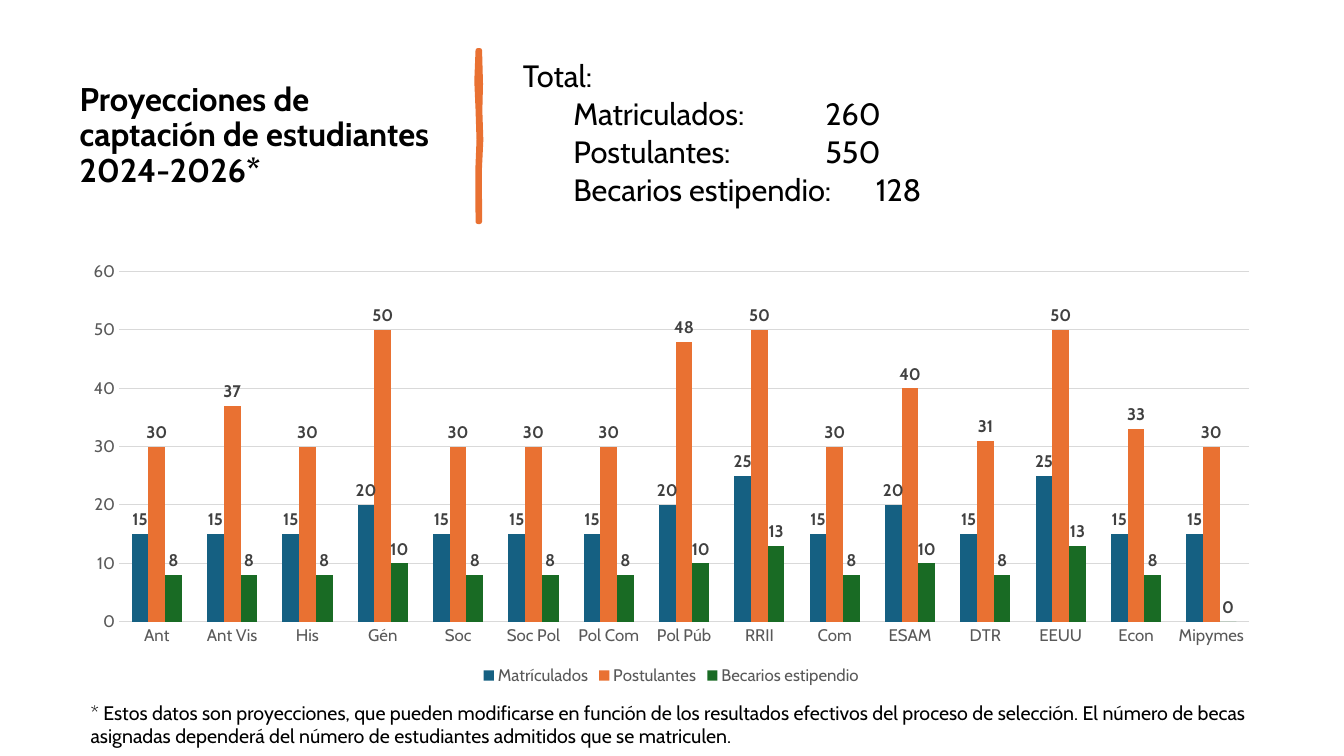
from lxml.etree import SubElement
from pptx import Presentation
from pptx.chart.data import CategoryChartData
from pptx.dml.color import RGBColor
from pptx.enum.chart import (XL_CHART_TYPE as ChartType, XL_LABEL_POSITION as LabelPosition,
                             XL_LEGEND_POSITION as LegendPosition, XL_TICK_MARK as TickMark)
from pptx.enum.text import MSO_ANCHOR as Anchor, MSO_AUTO_SIZE as AutoSize, PP_ALIGN as Align
from pptx.oxml.ns import qn
from pptx.util import Pt

FONT = "Cabin"
BLACK = RGBColor(0x00, 0x00, 0x00)
DARK_GRAY = RGBColor(0x40, 0x40, 0x40)
GRAY = RGBColor(0x59, 0x59, 0x59)
LIGHT_GRAY = RGBColor(0xD9, 0xD9, 0xD9)
BLUE = RGBColor(0x15, 0x60, 0x82)
ORANGE = RGBColor(0xE9, 0x71, 0x32)
GREEN = RGBColor(0x19, 0x6B, 0x24)


def format_font(font, size, color, bold=False):
    font.name, font.size, font.bold = FONT, Pt(size), bold
    font.color.rgb = color


def write_text(box, lines, size, bold=False, anchor=Anchor.TOP, line_spacing=1.0, space_after=0):
    frame = box.text_frame
    frame.word_wrap = True
    frame.auto_size = AutoSize.NONE
    frame.vertical_anchor = anchor
    for index, line in enumerate(lines):
        para = frame.paragraphs[0] if index == 0 else frame.add_paragraph()
        para.alignment = Align.LEFT
        para.line_spacing = line_spacing
        para.space_before, para.space_after = Pt(0), Pt(space_after)
        span = para.add_run()
        span.text = line
        format_font(span.font, size, BLACK, bold)


deck = Presentation()
deck.slide_width, deck.slide_height = Pt(960), Pt(540)
page = deck.slides.add_slide(deck.slide_layouts[5])
shapes = page.shapes

# Title
title = shapes.title
title.left, title.top, title.width, title.height = Pt(49.7), Pt(39.6), Pt(269.3), Pt(115.2)
write_text(title, ["Proyecciones de captación de estudiantes 2024-2026*"], 23.4,
           bold=True, anchor=Anchor.MIDDLE, line_spacing=0.9)

# Hand-drawn divider: down the right edge, up the left edge
divider_outline = [
    (342.7, 36), (343.4, 60), (342.9, 79), (343.6, 100), (342.6, 121), (342.7, 158.4),
    (341.3, 158.4), (341.2, 120), (342, 100), (341.3, 78), (340.4, 58), (341.3, 36),
]
corners = [(Pt(x), Pt(y)) for x, y in divider_outline]
builder = shapes.build_freeform(*corners[0], scale=1.0)
builder.add_line_segments(corners[1:], close=True)
divider = builder.convert_to_shape()
divider.shadow.inherit = False
divider.fill.solid()
divider.fill.fore_color.rgb = ORANGE
divider.line.color.rgb = ORANGE
divider.line.width = Pt(3.25)
SubElement(divider.line._get_or_add_ln(), qn("a:round"))

# Totals
totals = shapes.add_textbox(Pt(366.5), Pt(39.6), Pt(542.9), Pt(115.2))
write_text(totals, [
    "Total:",
    "\tMatriculados: \t\t260",
    "\tPostulantes: \t\t550",
    "\tBecarios estipendio: \t128",
], 22, anchor=Anchor.MIDDLE, line_spacing=0.8, space_after=6)

# Chart
data = CategoryChartData()
data.categories = ["Ant", "Ant Vis", "His", "Gén", "Soc", "Soc Pol", "Pol Com", "Pol Púb",
                   "RRII", "Com", "ESAM", "DTR", "EEUU", "Econ", "Mipymes"]
groups = [
    ("Matrículados", BLUE, [15, 15, 15, 20, 15, 15, 15, 20, 25, 15, 20, 15, 25, 15, 15]),
    ("Postulantes", ORANGE, [30, 37, 30, 50, 30, 30, 30, 48, 50, 30, 40, 31, 50, 33, 30]),
    ("Becarios estipendio", GREEN, [8, 8, 8, 10, 8, 8, 8, 10, 13, 8, 10, 8, 13, 8, 0]),
]
for name, _, values in groups:
    data.add_series(name, values)

chart = shapes.add_chart(ChartType.COLUMN_CLUSTERED, Pt(49.7), Pt(180.7), Pt(859.7), Pt(311.8),
                         data).chart
format_font(chart.font, 10, BLACK)
chart.has_title = False
chart.has_legend = True
chart.legend.position = LegendPosition.BOTTOM
chart.legend.include_in_layout = False
format_font(chart.legend.font, 12, GRAY)

for axis in (chart.category_axis, chart.value_axis):
    axis.major_tick_mark = axis.minor_tick_mark = TickMark.NONE
    format_font(axis.tick_labels.font, 12, GRAY)
category_line = chart.category_axis.format.line
value_axis = chart.value_axis
value_axis.minimum_scale, value_axis.maximum_scale, value_axis.major_unit = 0, 60, 10
value_axis.format.line.fill.background()
for line in (category_line, value_axis.major_gridlines.format.line):
    line.color.rgb = LIGHT_GRAY
    line.width = Pt(0.75)

plot = chart.plots[0]
plot.gap_width, plot.overlap = 150, 0
plot.vary_by_categories = False
for series, (_, color, _) in zip(plot.series, groups):
    series.format.fill.solid()
    series.format.fill.fore_color.rgb = color
    labels = series.data_labels
    labels.show_value = True
    labels.position = LabelPosition.OUTSIDE_END
    format_font(labels.font, 12, DARK_GRAY, bold=True)

# Footnote
footnote = shapes.add_textbox(Pt(57.6), Pt(496.8), Pt(843.8), Pt(41))
write_text(footnote, [
    "* Estos datos son proyecciones, que pueden modificarse en función de los resultados efectivos "
    "del proceso de selección. El número de becas asignadas dependerá del número de estudiantes "
    "admitidos que se matriculen."
], 14)

deck.save("out.pptx")
